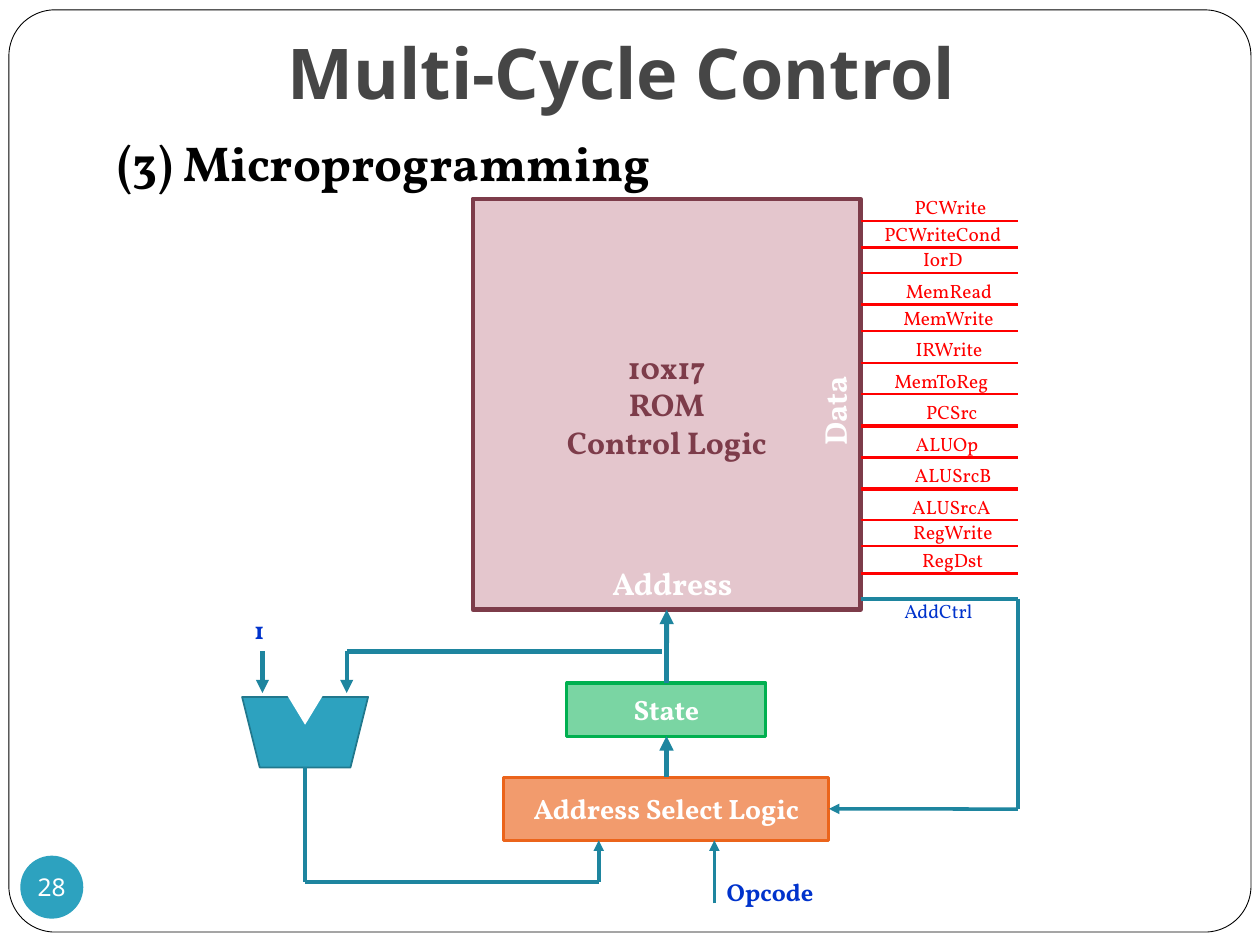
import pptx
import pptx.dml.color
import pptx.enum.shapes
import pptx.enum.text
import pptx.oxml
import pptx.oxml.ns
import pptx.util

Cm = pptx.util.Cm
Pt = pptx.util.Pt
SHAPE = pptx.enum.shapes.MSO_SHAPE
ANCHOR = pptx.enum.text.MSO_ANCHOR
ALIGN = pptx.enum.text.PP_ALIGN

RED, BLUE, TEAL, AQUA = "FF0000", "0033CC", "1E859F", "2DA2BF"
WHITE, BLACK, MAROON = "FFFFFF", "000000", "7D3C4A"
GREEN, ORANGE = "00B050", "EB641B"

BUS_LEFT, BUS_RIGHT = 17.35, 20.52
LABEL_RISE = 0.64
# name, label left, label width, line height on the page, line weight
SIGNALS = [
    ("PCWrite", 18.19, 2.01, 4.45, 1.25),
    ("PCWriteCond", 17.58, 2.97, 4.99, 1.25),
    ("IorD", 18.36, 1.32, 5.51, 1.25),
    ("MemRead", 18.01, 2.31, 6.14, 1.25),
    ("MemWrite", 17.96, 2.39, 6.68, 1.25),
    ("IRWrite", 18.21, 1.88, 7.32, 1.25),
    ("MemToReg", 17.78, 2.54, 7.95, 1.25),
    ("PCSrc", 18.42, 1.55, 8.59, 2),
    ("ALUOp", 18.21, 1.91, 9.22, 2),
    ("ALUSrcB", 18.19, 2.13, 9.86, 2),
    ("ALUSrcA", 18.14, 2.18, 10.49, 1.25),
    ("RegWrite", 18.16, 2.16, 11.01, 1.25),
    ("RegDst", 18.34, 1.78, 11.56, 1.25),
]


def rgb(value):
    return pptx.dml.color.RGBColor.from_string(value)


def set_values(target, values):
    for name, value in values.items():
        setattr(target, name, value)


def add_xml(parent, tag, **attributes):
    child = pptx.oxml.parse_xml(f"<{tag} {pptx.oxml.ns.nsdecls('a')}/>")
    for name, value in attributes.items():
        child.set(name, str(value))
    parent.append(child)


def write(box, text, size, color, font="Vollkorn", bold=True, align=ALIGN.CENTER,
          before=0, **frame_values):
    """Fill a box with one paragraph for each line of text."""
    frame = box.text_frame
    set_values(frame, {"word_wrap": True, **frame_values})
    for index, line in enumerate(text.split("\n")):
        para = frame.add_paragraph() if index else frame.paragraphs[0]
        set_values(para, {"alignment": align, "space_before": Pt(before)})
        span = para.add_run()
        span.text = line
        set_values(span.font, {"name": font, "size": Pt(size), "bold": bold})
        span.font.color.rgb = rgb(color)


def add_text(page, at, text, size, color, rotation=0, **values):
    box = page.shapes.add_textbox(*map(Cm, at))
    box.rotation = rotation
    write(box, text, size, color, **values)


def add_label(page, at, text, size, color, bold=False):
    add_text(page, at, text, size, color, bold=bold, align=ALIGN.LEFT, word_wrap=False)


def add_shape(page, kind, at, fill, line=None, weight=1, opacity=100, rotation=0):
    shape = page.shapes.add_shape(kind, *map(Cm, at))
    set_values(shape, {"rotation": rotation})
    shape.shadow.inherit = False
    shape.fill.solid()
    shape.fill.fore_color.rgb = rgb(fill)
    if opacity < 100:
        color = shape.fill._xPr.find(".//" + pptx.oxml.ns.qn("a:srgbClr"))
        add_xml(color, "a:alpha", val=opacity * 1000)
    if line:
        shape.line.color.rgb = rgb(line)
        shape.line.width = Pt(weight)
    else:
        shape.line.fill.background()
    return shape


def add_line(page, start, end, color=TEAL, weight=2, arrow=False):
    line = page.shapes.add_connector(
        pptx.enum.shapes.MSO_CONNECTOR.STRAIGHT, *map(Cm, start + end))
    line.line.color.rgb = rgb(color)
    line.line.width = Pt(weight)
    if arrow:
        add_xml(line.line._get_or_add_ln(), "a:tailEnd", type="triangle")
    add_xml(line._element.spPr, "a:effectLst")
    return line


def add_heading(page):
    frame = add_shape(page, SHAPE.ROUNDED_RECTANGLE, (0.18, 0.2, 25.04, 18.59),
                      WHITE, BLACK, 0.5)
    frame.adjustments[0] = 0.05
    add_text(page, (1.73, 0.13, 21.59, 2.41), "Multi-Cycle Control", 40, "464646",
             font="Noto Sans", vertical_anchor=ANCHOR.BOTTOM, margin_bottom=Cm(0.25))
    add_text(page, (2.11, 2.54, 21.79, 1.8), "(3) Microprogramming", 28, BLACK,
             align=ALIGN.LEFT, before=5.8)
    badge = add_shape(page, SHAPE.OVAL, (0.41, 17.25, 1.27, 1.27), AQUA)
    no_margins = {f"margin_{side}": 0 for side in ("left", "top", "right", "bottom")}
    write(badge, "28", 14, WHITE, font="Noto Sans", bold=False,
          vertical_anchor=ANCHOR.MIDDLE, **{**no_margins, "word_wrap": False})


def add_blocks(page):
    """Draw the ROM, the state register and the select logic, joined upwards."""
    blocks = []
    for at, text, size, ink, fill, line, weight, opacity in (
        ((9.53, 4.01, 7.82, 8.28), "10x17\nROM\nControl Logic", 18, MAROON,
         "D5A7B1", MAROON, 2.5, 64),
        ((11.43, 13.77, 4.01, 1.07), "State", 16, WHITE, GREEN, GREEN, 1.75, 52),
        ((10.16, 15.67, 6.55, 1.27), "Address Select Logic", 16, WHITE,
         ORANGE, ORANGE, 1.75, 64),
    ):
        box = add_shape(page, SHAPE.RECTANGLE, at, fill, line, weight, opacity)
        write(box, text, size, ink, vertical_anchor=ANCHOR.MIDDLE)
        blocks.append(box)
    for upper, lower in zip(blocks, blocks[1:]):
        arrow = add_line(page, (0, 0), (0, 0), weight=2.75, arrow=True)
        arrow.begin_connect(lower, 0)
        arrow.end_connect(upper, 2)
    add_text(page, (13.23, 7.77, 7.19, 1.02), "Data", 18, WHITE, rotation=270)
    add_text(page, (9.96, 11.25, 7.19, 1.02), "Address", 18, WHITE)
    return blocks[-1]


def add_signals(page):
    for name, left, width, y, weight in SIGNALS:
        add_label(page, (left, y - LABEL_RISE, width, 0.74), name, 11, RED)
        add_line(page, (BUS_LEFT, y), (BUS_RIGHT, y), RED, weight)


def add_adder(page):
    add_shape(page, SHAPE.TRAPEZOID, (4.88, 14.05, 2.54, 1.42), AQUA, "21788D",
              rotation=180)
    add_shape(page, SHAPE.ISOSCELES_TRIANGLE, (5.64, 13.77, 1.02, 0.84), WHITE,
              rotation=180)
    for x in (5.29, 6.99):
        add_line(page, (x, 13.13), (x, 13.97), weight=2.5, arrow=True)
    add_line(page, (13.34, 13.13), (6.99, 13.13), weight=2.75)
    add_label(page, (4.88, 12.27, 0.76, 0.86), "1", 14, BLUE, bold=True)


def add_select_inputs(page, select):
    add_line(page, (6.15, 15.47), (6.15, 17.78))
    add_line(page, (6.15, 17.78), (12.07, 17.78))
    add_line(page, (12.07, 17.78), (12.07, 16.94), arrow=True)
    add_line(page, (14.4, 18.21), (14.4, 16.94), arrow=True)
    add_label(page, (14.4, 17.55, 2.29, 0.86), "Opcode", 14, BLUE, bold=True)
    top, bottom = 12.07, 16.31
    add_line(page, (BUS_LEFT, top), (BUS_RIGHT, top))
    add_line(page, (BUS_RIGHT, top), (BUS_RIGHT, bottom))
    feedback = add_line(page, (BUS_RIGHT, bottom), (16.71, bottom), arrow=True)
    feedback.end_connect(select, 3)
    add_label(page, (17.98, 11.96, 1.98, 0.74), "AddCtrl", 11, BLUE)


def main():
    deck = pptx.Presentation()
    set_values(deck, {"slide_width": Cm(25.4), "slide_height": Cm(19.05)})
    page = deck.slides.add_slide(deck.slide_layouts[6])
    add_heading(page)
    select = add_blocks(page)
    add_signals(page)
    add_adder(page)
    add_select_inputs(page, select)
    deck.save("out.pptx")


if __name__ == "__main__":
    main()
